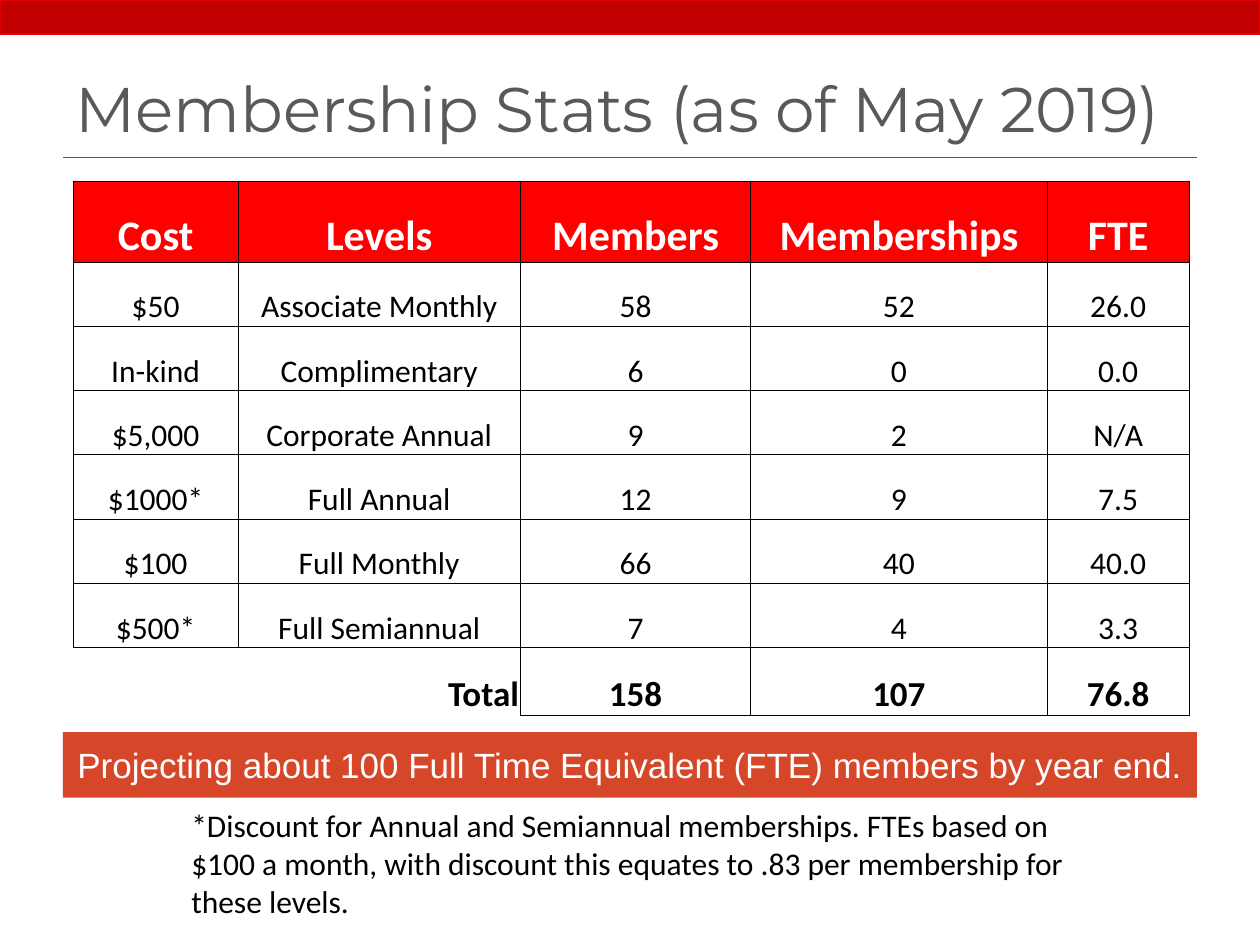
from dataclasses import dataclass

from lxml import etree
from pptx import Presentation
from pptx.dml.color import RGBColor
from pptx.enum.shapes import MSO_CONNECTOR, MSO_SHAPE
from pptx.enum.text import MSO_ANCHOR, PP_ALIGN
from pptx.oxml.ns import qn
from pptx.util import Inches, Pt

LEFT, CENTER, RIGHT = PP_ALIGN.LEFT, PP_ALIGN.CENTER, PP_ALIGN.RIGHT
TOP, MIDDLE, BOTTOM = MSO_ANCHOR.TOP, MSO_ANCHOR.MIDDLE, MSO_ANCHOR.BOTTOM
RECTANGLE, STRAIGHT = MSO_SHAPE.RECTANGLE, MSO_CONNECTOR.STRAIGHT

WHITE = RGBColor(0xFF, 0xFF, 0xFF)
BLACK = RGBColor(0x00, 0x00, 0x00)
GRAY = RGBColor(0x59, 0x59, 0x59)
DARK_RED = RGBColor(0xC0, 0x00, 0x00)
EDGE_RED = RGBColor(0xE2, 0x00, 0x00)
HEADER_RED = RGBColor(0xFF, 0x00, 0x00)
BANNER_ORANGE = RGBColor(0xD6, 0x47, 0x2A)

# The slide is a grid of 100 columns by 75 rows.
SLIDE_WIDTH, SLIDE_HEIGHT = Inches(10), Inches(7.5)
COLUMN, ROW = SLIDE_WIDTH // 100, SLIDE_HEIGHT // 75

COLUMN_WIDTHS = (13.1, 22.4, 18.3, 23.5, 11.3)
ROW_HEIGHTS = (6.4, *[5.1] * 6, 5.4)
MEMBERSHIP_ROWS = (
    ("Cost", "Levels", "Members", "Memberships", "FTE"),
    ("$50", "Associate Monthly", "58", "52", "26.0"),
    ("In-kind", "Complimentary", "6", "0", "0.0"),
    ("$5,000", "Corporate Annual", "9", "2", "N/A"),
    ("$1000*", "Full Annual", "12", "9", "7.5"),
    ("$100", "Full Monthly", "66", "40", "40.0"),
    ("$500*", "Full Semiannual", "7", "4", "3.3"),
    ("", "Total", "158", "107", "76.8"),
)
CELL_FORMAT = {
    "margin_left": Inches(0.01),
    "margin_right": Inches(0.01),
    "margin_top": Inches(0.01),
    "margin_bottom": 0,
    "vertical_anchor": BOTTOM,
}


@dataclass(frozen=True)
class Box:
    left: float
    top: float
    width: float
    height: float

    def lengths(self) -> tuple:
        return (
            round(self.left * COLUMN), round(self.top * ROW),
            round(self.width * COLUMN), round(self.height * ROW),
        )


@dataclass(frozen=True)
class TextStyle:
    font: str
    size: int
    color: RGBColor
    bold: bool = False
    align: PP_ALIGN = LEFT


HEADER = TextStyle("Calibri", 24, WHITE, True, CENTER)
BODY = TextStyle("Calibri", 18, BLACK, False, CENTER)
TOTAL = TextStyle("Calibri", 20, BLACK, True, CENTER)
TOTAL_LABEL = TextStyle("Calibri", 20, BLACK, True, RIGHT)


def apply_format(target, values: dict) -> None:
    for name, value in values.items():
        setattr(target, name, value)


def write_text(text_frame, text: str, style: TextStyle) -> None:
    paragraph = text_frame.paragraphs[0]
    paragraph.alignment = style.align
    run = paragraph.add_run()
    run.text = text
    apply_format(run.font, {"name": style.font, "size": Pt(style.size), "bold": style.bold})
    run.font.color.rgb = style.color


def add_rectangle(slide, box: Box, fill: RGBColor, edge: RGBColor | None = None):
    shape = slide.shapes.add_shape(RECTANGLE, *box.lengths())
    shape.shadow.inherit = False
    shape.fill.solid()
    shape.fill.fore_color.rgb = fill
    if edge is None:
        shape.line.fill.background()
    else:
        shape.line.color.rgb = edge
        shape.line.width = Pt(0.75)
    return shape


def add_text(slide, box: Box, text: str, style: TextStyle, anchor=TOP, **margins) -> None:
    text_frame = slide.shapes.add_textbox(*box.lengths()).text_frame
    apply_format(text_frame, {"word_wrap": True, "vertical_anchor": anchor, **margins})
    write_text(text_frame, text, style)


def add_rule(slide, box: Box) -> None:
    left, top, width, height = box.lengths()
    rule = slide.shapes.add_connector(STRAIGHT, left, top, left + width, top + height)
    rule.line.color.rgb = GRAY
    rule.line.width = Pt(0.75)
    etree.SubElement(rule._element.spPr, qn("a:effectLst"))


def set_borders(cell, visible_sides: str) -> None:
    """Draw the sides named by L, R, T and B, and hide the others."""
    properties = cell._tc.get_or_add_tcPr()
    for side in "LRTB":
        line = etree.SubElement(properties, qn(f"a:ln{side}"), w=str(Pt(0.5)))
        if side in visible_sides:
            fill = etree.SubElement(line, qn("a:solidFill"))
            etree.SubElement(fill, qn("a:srgbClr"), val=str(BLACK))
        else:
            etree.SubElement(line, qn("a:noFill"))


def cell_style(row: int, column: int) -> TextStyle:
    if row == 0:
        return HEADER
    if row < len(MEMBERSHIP_ROWS) - 1:
        return BODY
    return TOTAL_LABEL if column == 1 else TOTAL


def add_membership_table(slide, left: float, top: float) -> None:
    box = Box(left, top, sum(COLUMN_WIDTHS), sum(ROW_HEIGHTS))
    table = slide.shapes.add_table(
        len(ROW_HEIGHTS), len(COLUMN_WIDTHS), *box.lengths()
    ).table
    apply_format(table, {"first_row": False, "horz_banding": False})
    for column, width in zip(table.columns, COLUMN_WIDTHS):
        column.width = round(width * COLUMN)
    for row, height in zip(table.rows, ROW_HEIGHTS):
        row.height = round(height * ROW)

    open_sides = {0: "T", 1: "TR"}
    last_row = len(MEMBERSHIP_ROWS) - 1
    for row, texts in enumerate(MEMBERSHIP_ROWS):
        for column, text in enumerate(texts):
            cell = table.cell(row, column)
            apply_format(cell, CELL_FORMAT)
            set_borders(cell, open_sides.get(column, "LRTB") if row == last_row else "LRTB")
            if row == 0:
                cell.fill.solid()
                cell.fill.fore_color.rgb = HEADER_RED
            else:
                cell.fill.background()
            if text:
                write_text(cell.text_frame, text, cell_style(row, column))


def main() -> None:
    presentation = Presentation()
    apply_format(presentation, {"slide_width": SLIDE_WIDTH, "slide_height": SLIDE_HEIGHT})
    slide = presentation.slides.add_slide(presentation.slide_layouts[6])

    add_rectangle(slide, Box(0, 0, 100, 2.7), DARK_RED, EDGE_RED)
    add_rule(slide, Box(5, 12.5, 90, 0))
    add_text(
        slide, Box(5, 3.4, 90, 9.1), "Membership Stats (as of May 2019)",
        TextStyle("Montserrat", 36, GRAY), BOTTOM,
        margin_top=Inches(0.1), margin_bottom=Inches(0.1),
    )
    banner = add_rectangle(slide, Box(5, 58.1, 90, 5.2), BANNER_ORANGE)
    apply_format(banner.text_frame, {"word_wrap": True, "vertical_anchor": MIDDLE})
    write_text(
        banner.text_frame,
        "Projecting about 100 Full Time Equivalent (FTE) members by year end.",
        TextStyle("Arial", 20, WHITE, align=CENTER),
    )
    add_text(
        slide, Box(14.2, 63.5, 74.7, 10.1),
        "*Discount for Annual and Semiannual memberships. FTEs based on $100 a month, "
        "with discount this equates to .83 per membership for these levels.",
        TextStyle("Calibri", 18, BLACK),
    )
    add_membership_table(slide, 5.8, 14.4)
    presentation.save("out.pptx")


if __name__ == "__main__":
    main()
